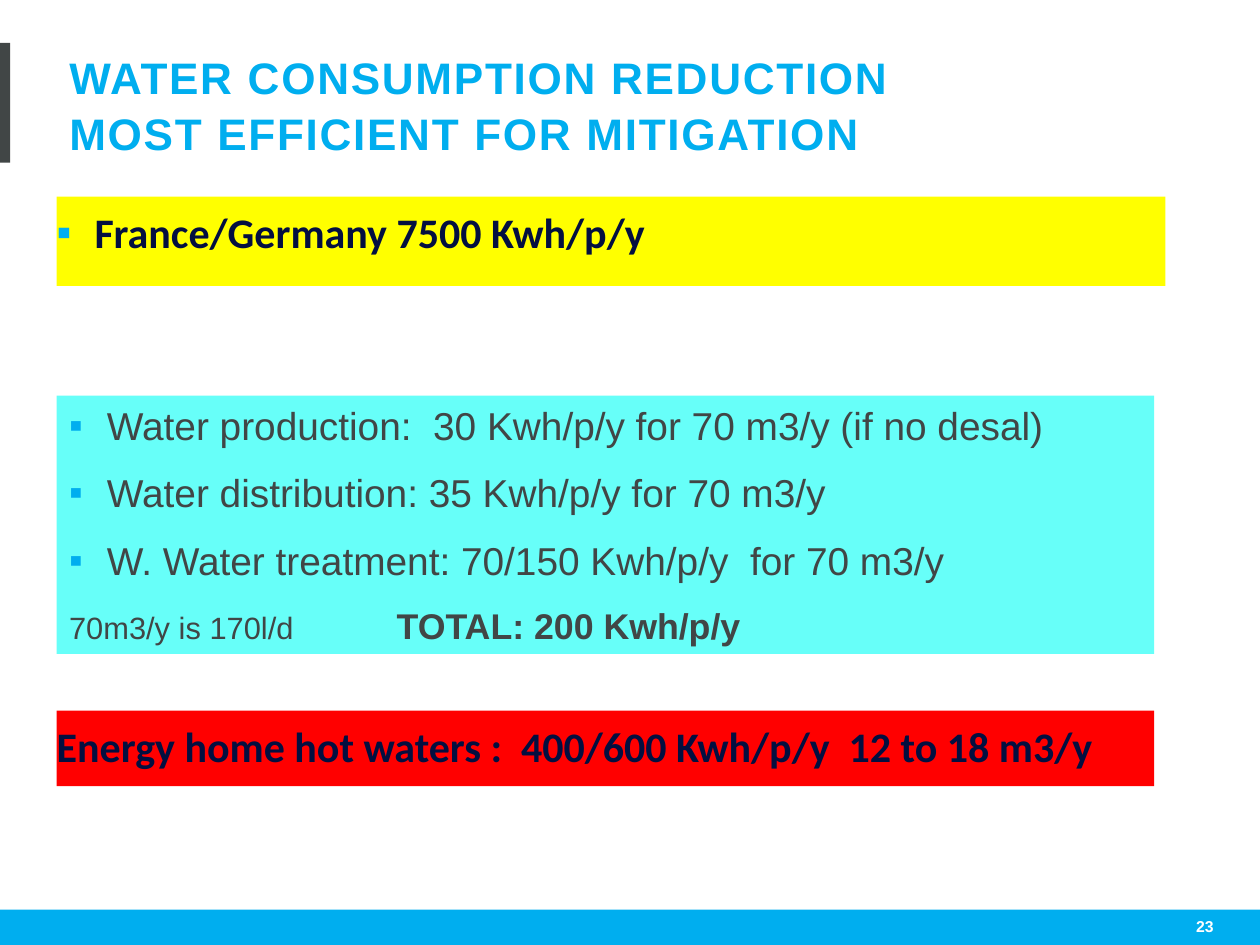
from lxml import etree
from pptx import Presentation
from pptx.dml.color import RGBColor
from pptx.enum.shapes import MSO_SHAPE
from pptx.enum.text import MSO_ANCHOR, MSO_AUTO_SIZE, PP_ALIGN
from pptx.oxml.ns import qn
from pptx.util import Inches, Pt

COLORS = {"blue": "00AEEF", "grey": "414646", "navy": "030F40", "white": "FFFFFF",
          "yellow": "FFFF00", "cyan": "67FFF9", "red": "FF0000"}
LEFT = 0.45


def rgb(name):
    return RGBColor.from_string(COLORS[name])


def place(sp, box):
    sp.left, sp.top, sp.width, sp.height = (Inches(v) for v in box)


def add_band(s, box, color):
    sp = s.shapes.add_shape(MSO_SHAPE.RECTANGLE, *(Inches(v) for v in box))
    sp.shadow.inherit = False
    sp.fill.solid()
    sp.fill.fore_color.rgb = rgb(color)
    sp.line.fill.background()
    return sp


def setup_frame(sp, anchor=MSO_ANCHOR.TOP, inset=None):
    tf = sp.text_frame
    tf.word_wrap = True
    tf.auto_size = MSO_AUTO_SIZE.NONE
    tf.vertical_anchor = anchor
    if inset is not None:
        tf.margin_left = tf.margin_right = tf.margin_top = tf.margin_bottom = Inches(inset)
    return tf


def add_run(p, text, size, color, font="Arial", bold=False):
    r = p.add_run()
    r.text = text
    r.font.name, r.font.size, r.font.bold = font, Pt(size), bold
    r.font.color.rgb = rgb(color)
    return r


def set_bullet(p):
    pPr = p._p.get_or_add_pPr()
    pPr.set("marL", str(Inches(0.3)))
    pPr.set("indent", str(-Inches(0.3)))
    clr = etree.SubElement(pPr, qn("a:buClr"))
    etree.SubElement(clr, qn("a:srgbClr"), val=COLORS["blue"])
    etree.SubElement(pPr, qn("a:buFont"), typeface="Arial")
    etree.SubElement(pPr, qn("a:buChar"), char="▪")


def set_tab(p, pos):
    tabs = etree.SubElement(p._p.get_or_add_pPr(), qn("a:tabLst"))
    etree.SubElement(tabs, qn("a:tab"), pos=str(Inches(pos)), algn="l")


def build_frame(s, width, height):
    bar = 0.28
    add_band(s, (0, height - bar, width, bar), "blue")
    add_band(s, (0, 0.34, 0.08, 0.95), "grey")
    sp = s.shapes.add_textbox(Inches(7.29), Inches(7.15), Inches(2.44), Inches(0.4))
    p = setup_frame(sp, MSO_ANCHOR.MIDDLE).paragraphs[0]
    p.alignment = PP_ALIGN.RIGHT
    add_run(p, "23", 9, "white", bold=True)


def build_title(s, box):
    sp = s.shapes.title
    place(sp, box)
    p = setup_frame(sp, MSO_ANCHOR.MIDDLE).paragraphs[0]
    p.alignment = PP_ALIGN.LEFT
    p.line_spacing = 1.05
    for i, line in enumerate(("WATER CONSUMPTION REDUCTION", "MOST EFFICIENT FOR MITIGATION")):
        if i:
            p.add_line_break()
        r = add_run(p, line, 25.2, "blue", bold=True)
        r.font._element.set("spc", "100")


def write_headline(sp, text, bullet=False):
    p = setup_frame(sp, inset=0).paragraphs[0]
    if bullet:
        set_bullet(p)
    p.alignment = PP_ALIGN.LEFT
    p.line_spacing = 1.2
    p.space_before = Pt(0)
    add_run(p, text, 24, "navy", "Calibri", True)


def build_country_band(s, box):
    sp = s.placeholders[1]
    place(sp, box)
    sp.fill.solid()
    sp.fill.fore_color.rgb = rgb("yellow")
    write_headline(sp, "France/Germany 7500 Kwh/p/y", bullet=True)


def build_water_band(s, box):
    tf = setup_frame(add_band(s, box, "cyan"))
    lines = ("Water production:  30 Kwh/p/y for 70 m3/y (if no desal)",
             "Water distribution: 35 Kwh/p/y for 70 m3/y",
             "W. Water treatment: 70/150 Kwh/p/y  for 70 m3/y")
    for i, line in enumerate(lines):
        p = tf.add_paragraph() if i else tf.paragraphs[0]
        set_bullet(p)
        p.alignment = PP_ALIGN.LEFT
        p.space_before = Pt(11.8 if i else 0)
        add_run(p, line, 22.2, "grey")
    p = tf.add_paragraph()
    set_tab(p, 2.6)
    p.alignment = PP_ALIGN.LEFT
    p.space_before = Pt(11.8)
    add_run(p, "70m3/y is 170l/d\t", 17.6, "grey")
    add_run(p, "TOTAL: 200 Kwh/p/y", 20.4, "grey", bold=True)


def build_hot_water_band(s, box):
    sp = add_band(s, box, "red")
    write_headline(sp, "Energy home hot waters :  400/600 Kwh/p/y  12 to 18 m3/y")


def main():
    prs = Presentation()
    prs.slide_width, prs.slide_height = Inches(10), Inches(7.5)
    s = prs.slides.add_slide(prs.slide_layouts[1])
    build_frame(s, 10, 7.5)
    build_title(s, (LEFT, 0.37, 7.46, 0.9))
    build_country_band(s, (LEFT, 1.56, 8.8, 0.71))
    build_water_band(s, (LEFT, 3.14, 8.71, 2.05))
    build_hot_water_band(s, (LEFT, 5.64, 8.71, 0.6))
    prs.save("out.pptx")


if __name__ == "__main__":
    main()
